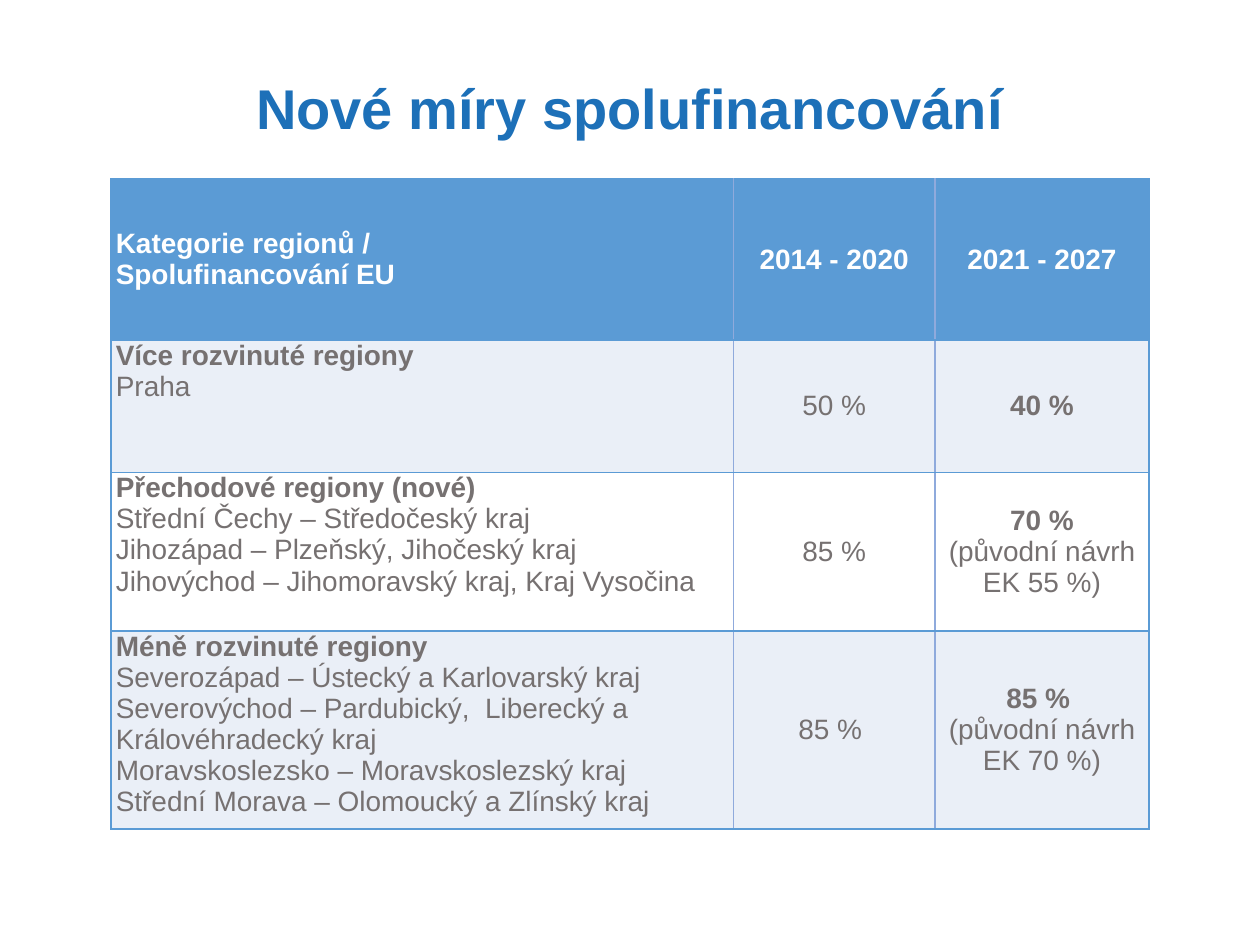
from copy import deepcopy

from lxml import etree
from pptx import Presentation
from pptx.dml.color import RGBColor
from pptx.enum.text import MSO_ANCHOR, PP_ALIGN
from pptx.oxml.ns import qn
from pptx.util import Inches, Pt

LEFT, CENTER = PP_ALIGN.LEFT, PP_ALIGN.CENTER
TOP, MIDDLE = MSO_ANCHOR.TOP, MSO_ANCHOR.MIDDLE

COLORS = {
    "title": "1D70B8",
    "header": "5B9BD5",
    "divider": "8FAADC",
    "band": "EAEFF7",
    "white": "FFFFFF",
    "text": "767171",
}
TITLE = "Nové míry spolufinancování"
HEADERS = [
    ["Kategorie regionů /", "Spolufinancování EU"],
    ["2014 - 2020"],
    ["2021 - 2027"],
]
REGIONS = [
    (["Více rozvinuté regiony\nPraha"], ["50 %"], ["40 %"]),
    (
        [
            "Přechodové regiony (nové)\nStřední Čechy – Středočeský kraj",
            "Jihozápad – Plzeňský, Jihočeský kraj",
            "Jihovýchod – Jihomoravský kraj, Kraj Vysočina",
        ],
        ["85 %"],
        ["70 %", "(původní návrh EK 55 %)"],
    ),
    (
        [
            "Méně rozvinuté regiony\nSeverozápad – Ústecký a Karlovarský kraj",
            "Severovýchod – Pardubický,  Liberecký a Královéhradecký kraj\n"
            "Moravskoslezsko – Moravskoslezský kraj",
            "Střední Morava – Olomoucký a Zlínský kraj",
        ],
        ["85 % "],
        ["85 % ", "(původní návrh EK 70 %)"],
    ),
]
COLUMN_WIDTHS = [4.94, 1.6, 1.7]
ROW_HEIGHTS = [1.28, 1.05, 1.26, 1.57]


def write_text(frame, paragraphs, size, color, align=LEFT, bold="all"):
    first_line = True
    for index, text in enumerate(paragraphs):
        para = frame.paragraphs[0] if index == 0 else frame.add_paragraph()
        para.alignment = align
        span = None
        for line in text.split("\n"):
            if span is not None:
                para.add_line_break()
                para._p[-1].append(deepcopy(span._r.rPr))
            span = para.add_run()
            span.text = line
            span.font.name = "Arial"
            span.font.size = Pt(size)
            span.font.bold = bold == "all" or (bold == "first" and first_line)
            span.font.color.rgb = RGBColor.from_string(color)
            first_line = False


def add_borders(cell, column):
    last = len(COLUMN_WIDTHS) - 1
    sides = {
        "L": "header" if column == 0 else "divider",
        "R": "header" if column == last else "divider",
        "T": "header",
        "B": "header",
    }
    properties = cell._tc.get_or_add_tcPr()
    for side, color in sides.items():
        line = etree.SubElement(properties, qn(f"a:ln{side}"), w=str(Pt(1)))
        fill = etree.SubElement(line, qn("a:solidFill"))
        etree.SubElement(fill, qn("a:srgbClr"), val=COLORS[color])


def format_cell(cell, column, fill, anchor):
    cell.margin_left = cell.margin_right = Inches(0.04)
    cell.margin_top = cell.margin_bottom = 0
    cell.vertical_anchor = anchor
    add_borders(cell, column)
    cell.fill.solid()
    cell.fill.fore_color.rgb = RGBColor.from_string(fill)


def add_title(page):
    box = page.shapes.title
    box.left, box.top = Inches(0.69), Inches(0.39)
    box.width, box.height = Inches(8.62), Inches(0.92)
    box.text_frame.vertical_anchor = MIDDLE
    write_text(box.text_frame, [TITLE], 32, COLORS["title"], align=CENTER)


def add_rates_table(page):
    table = page.shapes.add_table(
        len(ROW_HEIGHTS), len(COLUMN_WIDTHS), Inches(0.88), Inches(1.42),
        Inches(sum(COLUMN_WIDTHS)), Inches(sum(ROW_HEIGHTS)),
    ).table
    for column, width in zip(table.columns, COLUMN_WIDTHS):
        column.width = Inches(width)
    for row, height in zip(table.rows, ROW_HEIGHTS):
        row.height = Inches(height)

    for row, contents in enumerate([HEADERS, *REGIONS]):
        is_header = row == 0
        fill = COLORS["header" if is_header else "band" if row % 2 else "white"]
        color = COLORS["white" if is_header else "text"]
        for column, paragraphs in enumerate(contents):
            cell = table.cell(row, column)
            anchor = TOP if column == 0 and not is_header else MIDDLE
            bold = "all" if is_header else "none" if column == 1 else "first"
            format_cell(cell, column, fill, anchor)
            write_text(cell.text_frame, paragraphs, 16, color,
                       align=CENTER if column else LEFT, bold=bold)


def main():
    deck = Presentation()
    deck.slide_width, deck.slide_height = Inches(10), Inches(7.5)
    page = deck.slides.add_slide(deck.slide_layouts[5])
    add_title(page)
    add_rates_table(page)
    deck.save("out.pptx")


if __name__ == "__main__":
    main()
